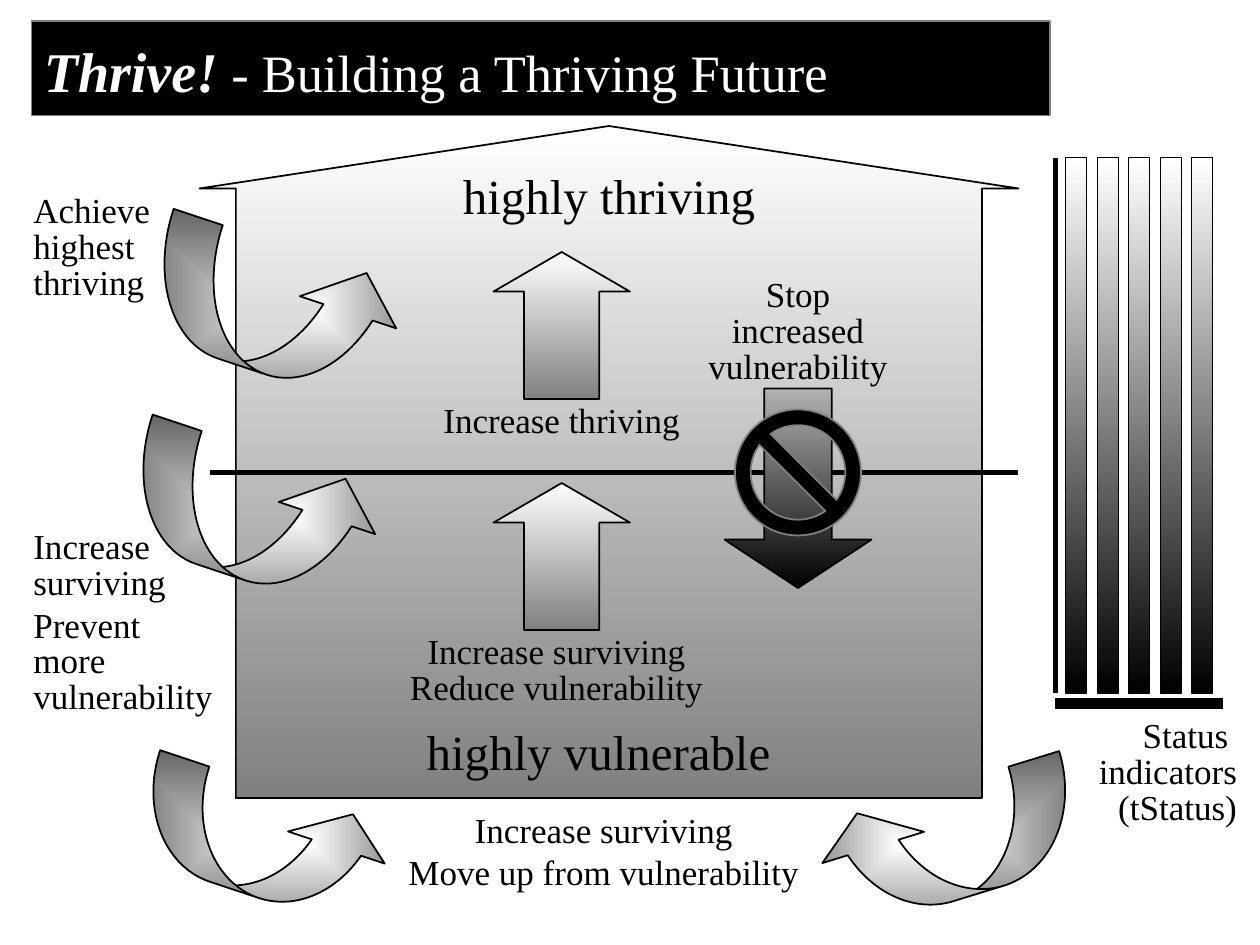
"""Build the Thrive! slide on a grid of 120 columns by 90 rows."""
from lxml import etree
from pptx import Presentation, util as u
from pptx.dml.color import RGBColor
from pptx.enum import shapes, text
from pptx.oxml import parse_xml
from pptx.oxml.ns import nsdecls, qn

FONT = "Times New Roman"
BLACK, GRAY, WHITE = "000000", "808080", "FFFFFF"
LEFT, CENTER, RIGHT = text.PP_ALIGN.LEFT, text.PP_ALIGN.CENTER, text.PP_ALIGN.RIGHT
KIND = shapes.MSO_SHAPE

presentation = Presentation()
presentation.slide_width, presentation.slide_height = u.Inches(10), u.Inches(7.5)
slide = presentation.slides.add_slide(presentation.slide_layouts[6])
UNIT = presentation.slide_width // 120


def write(paragraph, words, size=20, color=BLACK, bold=False, italic=False,
          align=LEFT, spacing=0.85, before=0):
    """Add a formatted run to a paragraph."""
    paragraph.alignment = align
    paragraph.line_spacing = spacing
    paragraph.space_before = u.Pt(before)
    run = paragraph.add_run()
    run.text = words
    run.font.name, run.font.size = FONT, u.Pt(size)
    run.font.bold, run.font.italic = bold, italic
    run.font.color.rgb = RGBColor.from_string(color)


def draw(kind, box, colors, line=BLACK, width=1, adjust=(), rotation=0, centered=False):
    """Add a preset shape with a plain or two-colour fill."""
    shape = slide.shapes.add_shape(kind, *(round(value * UNIT) for value in box))
    shape.shadow.inherit = False
    shape.rotation = rotation
    for index, value in enumerate(adjust):
        shape.adjustments[index] = value
    shape.line.color.rgb = RGBColor.from_string(line)
    shape.line.width = u.Pt(width)
    if len(colors) == 1:
        shape.fill.solid()
        shape.fill.fore_color.rgb = RGBColor.from_string(colors[0])
        return shape
    shape.fill.gradient()
    shape.fill.gradient_angle = 270
    for stop, color in zip(shape.fill.gradient_stops, colors):
        stop.color.rgb = RGBColor.from_string(color)
    if centered:
        linear = shape._element.spPr.find(".//" + qn("a:lin"))
        linear.getparent().replace(linear, parse_xml(
            f'<a:path {nsdecls("a")} path="rect">'
            '<a:fillToRect l="50000" t="50000" r="50000" b="50000"/></a:path>'))
    return shape


draw(KIND.UP_ARROW, (19, 12, 78, 64), (WHITE, GRAY), adjust=(0.911, 0.093))

title = draw(KIND.RECTANGLE, (3, 2, 97, 9), (BLACK,), line=GRAY)
title.text_frame.word_wrap = True
title.text_frame.vertical_anchor = text.MSO_ANCHOR.MIDDLE
title.text_frame.margin_top = u.Inches(0.15)
heading = title.text_frame.paragraphs[0]
write(heading, "Thrive!", size=32, color=WHITE, bold=True, italic=True, spacing=0.9)
write(heading, " - Building a Thriving Future", size=30, color=WHITE, spacing=0.9)

for start_x, start_y, end_x, end_y, width in (
        (20, 45, 97, 45, 3), (116.5, 67, 100.5, 67, 6), (100.5, 15, 100.5, 66, 3)):
    connector = slide.shapes.add_connector(
        shapes.MSO_CONNECTOR.STRAIGHT,
        *(round(value * UNIT) for value in (start_x, start_y, end_x, end_y)))
    connector.line.color.rgb = RGBColor.from_string(BLACK)
    connector.line.width = u.Pt(width)
    etree.SubElement(connector._element.spPr, qn("a:effectLst"))

labels = (
    ((35, 69, 44, 6), 28, CENTER, 0, ["highly vulnerable"]),
    ((35, 16, 46, 6), 28, CENTER, 0, ["highly thriving"]),
    ((96, 68, 23, 11.4), 20, RIGHT, 0, ["Status ", "indicators", "(tStatus)"]),
    ((37, 77, 41, 8.8), 20, CENTER, 4, ["Increase surviving", "Move up from vulnerability"]),
    ((34, 60, 38, 8), 20, CENTER, 0, ["Increase surviving", "Reduce vulnerability"]),
    ((2, 50, 20.2, 19), 20, LEFT, 4, ["Increase surviving", "Prevent more vulnerability"]),
    ((66, 26, 20, 11.4), 20, CENTER, 0, ["Stop increased vulnerability"]),
    ((2, 18, 14.2, 11.4), 20, LEFT, 0, ["Achieve highest thriving"]),
    ((38, 38, 31, 4.6), 20, CENTER, 0, ["Increase thriving"]),
)
for box, size, align, gap, lines in labels:
    frame = slide.shapes.add_textbox(*(round(value * UNIT) for value in box)).text_frame
    frame.word_wrap = True
    frame.auto_size = text.MSO_AUTO_SIZE.SHAPE_TO_FIT_TEXT
    for index, words in enumerate(lines):
        paragraph = frame.add_paragraph() if index else frame.paragraphs[0]
        write(paragraph, words, size=size, align=align, before=gap if index else 0)

upper_bend, lower_bend = (0.404, 0.793, 0.337), (0.475, 0.933, 0.337)
for kind, box, rotation, adjust in (
        (KIND.CURVED_DOWN_ARROW, (77.8, 75, 25.2, 10.7), 162.9, (0.473, 0.947, 0.333)),
        (KIND.CURVED_UP_ARROW, (13, 75, 24.2, 10.4), 18.4, lower_bend),
        (KIND.CURVED_UP_ARROW, (12, 43, 24.2, 12.2), 18.4, upper_bend),
        (KIND.CURVED_UP_ARROW, (14, 23.4, 24.2, 12.2), 18.4, upper_bend)):
    draw(kind, box, (WHITE, GRAY), adjust=adjust, rotation=rotation, centered=True)

for top in (46, 24):
    draw(KIND.UP_ARROW, (47, top, 13, 14), (WHITE, GRAY), adjust=(0.551, 0.29))

draw(KIND.DOWN_ARROW, (69, 37, 14, 19), ("B2B2B2", BLACK), adjust=(0.458, 0.329))
draw(KIND.NO_SYMBOL, (70, 39, 12, 12), (BLACK,), line=GRAY, adjust=(0.125,))

for bar in range(5):
    draw(KIND.RECTANGLE, (101.5 + 3 * bar, 15, 2, 51), (WHITE, BLACK), width=0.75)

presentation.save("out.pptx")
